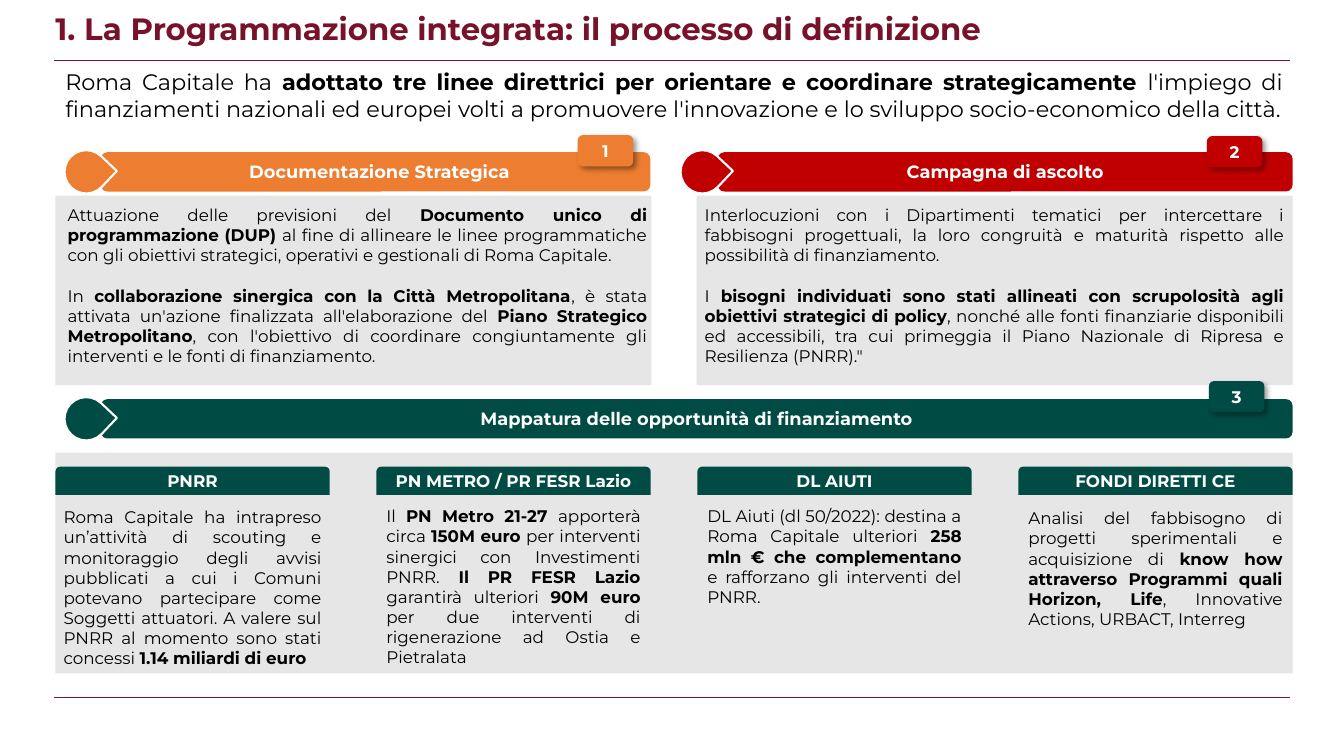
from lxml.etree import SubElement
from pptx import Presentation
from pptx.dml.color import RGBColor
from pptx.enum.shapes import MSO_CONNECTOR, MSO_SHAPE
from pptx.enum.text import MSO_ANCHOR, PP_ALIGN
from pptx.oxml.ns import qn
from pptx.util import Inches, Pt

COLORS = {
    "title": "78122B", "rule": "85122F", "panel": "E7E6E6", "black": "000000",
    "white": "FFFFFF", "outline": "FFFEFD",
    "orange": "ED7D31", "red": "C00000", "green": "004C45",
}
FONT = "Montserrat"

TITLE = "1. La Programmazione integrata: il processo di definizione"

# Runs alternate between regular and bold
INTRO = [[
    "Roma Capitale ha ",
    "adottato tre linee direttrici per orientare e coordinare strategicamente ",
    "l'impiego di finanziamenti nazionali ed europei volti a promuovere "
    "l'innovazione e lo sviluppo socio-economico della città.",
]]
STRATEGY = [
    ["Attuazione delle previsioni del ",
     "Documento unico di programmazione (DUP) ",
     "al fine di allineare le linee programmatiche con gli obiettivi strategici, "
     "operativi e gestionali di Roma Capitale."],
    ["In ", "collaborazione sinergica con la Città Metropolitana",
     ", è stata attivata un'azione finalizzata all'elaborazione del ",
     "Piano Strategico Metropolitano",
     ", con l'obiettivo di coordinare congiuntamente gli interventi e le fonti "
     "di finanziamento."],
]
LISTENING = [
    ["Interlocuzioni con i Dipartimenti tematici per intercettare i fabbisogni "
     "progettuali, la loro congruità e maturità rispetto alle possibilità di "
     "finanziamento."],
    ["I ", "bisogni individuati sono stati allineati con scrupolosità agli "
     "obiettivi strategici di policy",
     ", nonché alle fonti finanziarie disponibili ed accessibili, tra cui "
     "primeggia il Piano Nazionale di Ripresa e Resilienza (PNRR).\""],
]
PANELS = [(0.59, STRATEGY), (6.91, LISTENING)]

# label, colour, drop left, bar left, bar top, bar right, left inset, badge left, badge top
BARS = [
    ("Documentazione Strategica", "orange", 0.64, 1, 1.51, 6.45, 0.16, 5.73, 1.34),
    ("Campagna di ascolto", "red", 6.75, 7.12, 1.51, 12.82, 0.08, 11.97, 1.35),
    ("Mappatura delle opportunità di finanziamento", "green",
     0.64, 1, 3.96, 12.82, 0.08, 11.99, 3.78),
]

# heading, text top, text height, side inset, runs
FUNDS = [
    ("PNRR", 4.99, 1.8, 0.08, [
        "Roma Capitale ha intrapreso un’attività di scouting e monitoraggio degli "
        "avvisi pubblicati a cui i Comuni potevano partecipare come Soggetti "
        "attuatori. A valere sul PNRR al momento sono stati concessi ",
        "1.14 miliardi di euro"]),
    ("PN METRO / PR FESR Lazio", 4.97, 1.72, 0.1, [
        "Il ", "PN Metro 21-27 ", "apporterà circa ", "150M euro ",
        "per interventi sinergici con Investimenti PNRR.", " Il PR FESR Lazio ",
        "garantirà ulteriori ", "90M euro ",
        "per due interventi di rigenerazione ad Ostia e Pietralata"]),
    ("DL AIUTI", 4.97, 1.11, 0.1, [
        "DL Aiuti (dl 50/2022): destina a Roma Capitale ulteriori ",
        "258 mln € che complementano",
        " e rafforzano gli interventi del PNRR."]),
    ("FONDI DIRETTI CE", 4.99, 1.31, 0.1, [
        "Analisi del fabbisogno di progetti sperimentali e acquisizione di ",
        "know how attraverso Programmi quali Horizon, Life",
        ", Innovative Actions, URBACT, Interreg"]),
]

LEFT, WIDTH = 0.55, 12.27
FUND_WIDTH, PANEL_WIDTH = 2.72, 5.91
FUND_STEP = (WIDTH - FUND_WIDTH) / (len(FUNDS) - 1)
PANEL_STEP = WIDTH - PANEL_WIDTH
BAR_HEIGHT, DROP_SIZE = 0.39, 0.43

deck = Presentation()
deck.slide_width, deck.slide_height = Inches(13.33), Inches(7.5)
page = deck.slides.add_slide(deck.slide_layouts[6])


def color(name):
    return RGBColor.from_string(COLORS[name])


def add_span(para, text, size, ink, bold):
    span = para.add_run()
    span.text = text
    span.font.name = FONT
    span.font.size = Pt(size)
    span.font.bold = bold
    span.font.color.rgb = color(ink)


def set_margins(frame, side, top, bottom):
    frame.word_wrap = True
    frame.margin_left = frame.margin_right = Inches(side)
    frame.margin_top, frame.margin_bottom = Inches(top), Inches(bottom)


def add_text(left, top, width, height, paragraphs, size, side=0.1, edge=0.05):
    box = page.shapes.add_textbox(*map(Inches, (left, top, width, height)))
    frame = box.text_frame
    set_margins(frame, side, edge, edge)
    for index, runs in enumerate(paragraphs):
        para = frame.add_paragraph() if index else frame.paragraphs[0]
        para.alignment = PP_ALIGN.JUSTIFY
        if index:
            para.space_before = Pt(14.5)
        for position, text in enumerate(runs):
            add_span(para, text, size, "black", position % 2 == 1)


def add_block(kind, left, top, width, height, fill):
    block = page.shapes.add_shape(kind, *map(Inches, (left, top, width, height)))
    block.shadow.inherit = False
    block.fill.solid()
    block.fill.fore_color.rgb = color(fill)
    block.line.fill.background()
    return block


def add_label(block, text, size, ink="white", side=0.08, top=0.04, bottom=0.04):
    frame = block.text_frame
    set_margins(frame, side, top, bottom)
    frame.vertical_anchor = MSO_ANCHOR.MIDDLE
    para = frame.paragraphs[0]
    para.alignment = PP_ALIGN.CENTER
    add_span(para, text, size, ink, True)
    return para


def add_rule(top):
    rule = page.shapes.add_connector(
        MSO_CONNECTOR.STRAIGHT, *map(Inches, (0.54, top, 12.79, top)))
    rule.line.color.rgb = color("rule")
    rule.line.width = Pt(0.5)
    SubElement(rule._element.spPr, qn("a:effectLst"))


def add_shadow(block):
    effects = block._element.spPr.find(qn("a:effectLst"))
    shade = SubElement(effects, qn("a:outerShdw"), blurRad=str(Pt(4)),
                       dist=str(Pt(3)), dir=str(45 * 60000),
                       algn="tl", rotWithShape="0")
    tint = SubElement(shade, qn("a:srgbClr"), val=COLORS["black"])
    SubElement(tint, qn("a:alpha"), val="40000")


for rule_top in (6.92, 0.6):
    add_rule(rule_top)

title = page.shapes.add_textbox(*map(Inches, (LEFT, 0.1, 11.78, 0.45)))
set_margins(title.text_frame, 0, 0, 0)
add_span(title.text_frame.paragraphs[0], TITLE, 22, "title", True)
add_text(LEFT, 0.63, WIDTH, 0.91, INTRO, 16)

for column, (text_left, paragraphs) in enumerate(PANELS):
    add_block(MSO_SHAPE.RECTANGLE, LEFT + column * PANEL_STEP, 1.94,
              PANEL_WIDTH, 1.88, "panel")
    add_text(text_left, 1.99, PANEL_WIDTH, 1.77, paragraphs, 12, 0.08, 0.04)

add_block(MSO_SHAPE.RECTANGLE, LEFT, 4.49, WIDTH, 2.19, "panel")
for column, (heading, top, height, side, runs) in enumerate(FUNDS):
    left = LEFT + column * FUND_STEP
    tab = add_block(MSO_SHAPE.ROUND_2_SAME_RECTANGLE, left, 4.63,
                    FUND_WIDTH, 0.28, "green")
    para = add_label(tab, heading, 12, side=0.05, top=0.05, bottom=0.03)
    para.line_spacing = 0.9
    add_text(left, top, FUND_WIDTH, height, [runs], 12, side, side / 2)

for number, bar in enumerate(BARS, 1):
    label, fill, drop_left, left, top, right, inset, badge_left, badge_top = bar
    band = add_block(MSO_SHAPE.ROUNDED_RECTANGLE, left, top,
                     right - left, BAR_HEIGHT, fill)
    add_label(band, label, 12.7)
    band.text_frame.margin_left = Inches(inset)
    drop = add_block(MSO_SHAPE.TEAR, drop_left,
                     top - (DROP_SIZE - BAR_HEIGHT) / 2, DROP_SIZE, DROP_SIZE, fill)
    drop.rotation = 43.4
    drop.line.color.rgb = color("outline")
    drop.line.width = Pt(1.5)
    badge = add_block(MSO_SHAPE.ROUNDED_RECTANGLE, badge_left, badge_top,
                      0.55, 0.31, fill)
    add_shadow(badge)
    add_label(badge, str(number), 12, "outline", 0.1, 0.05, 0.05)

deck.save("out.pptx")
